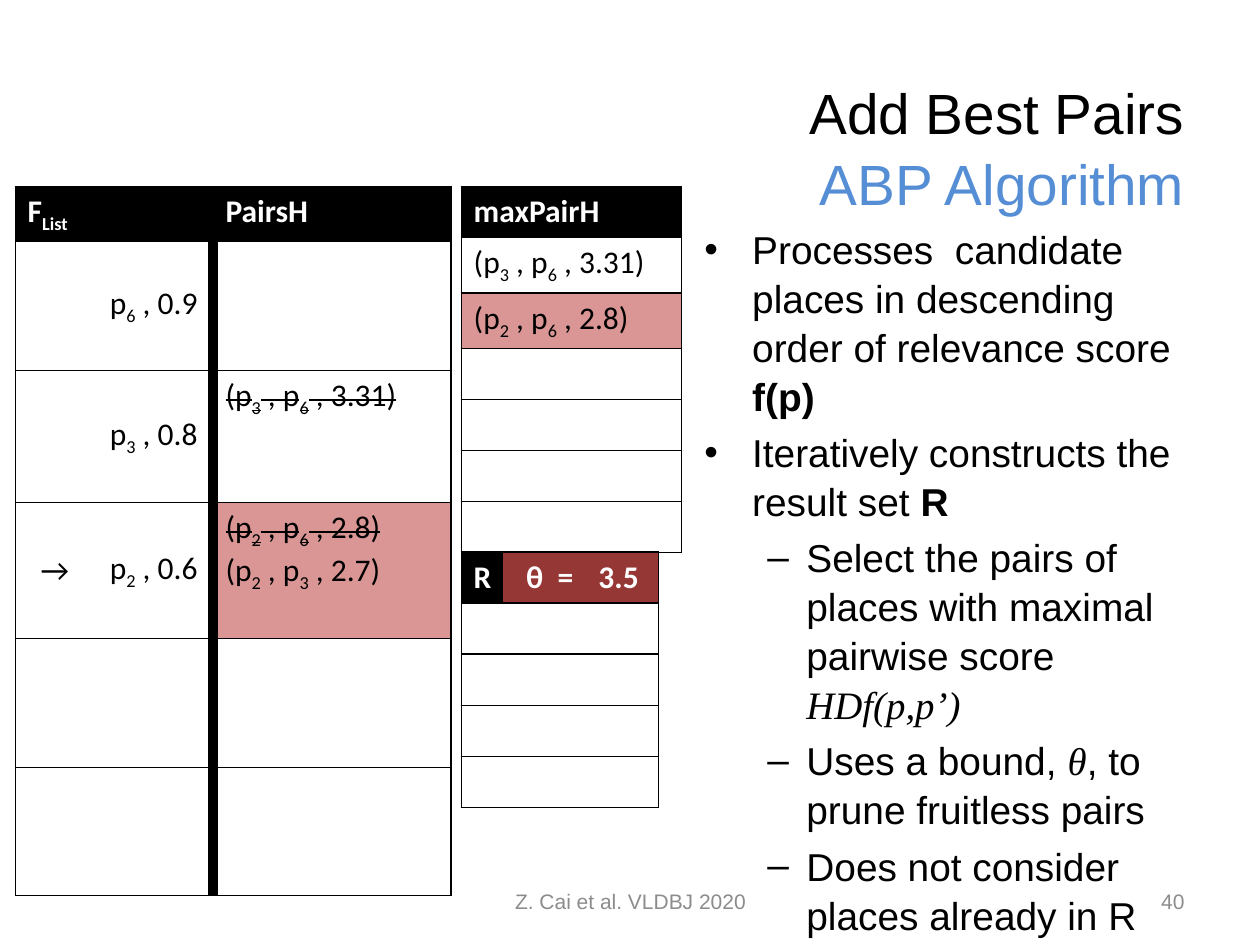
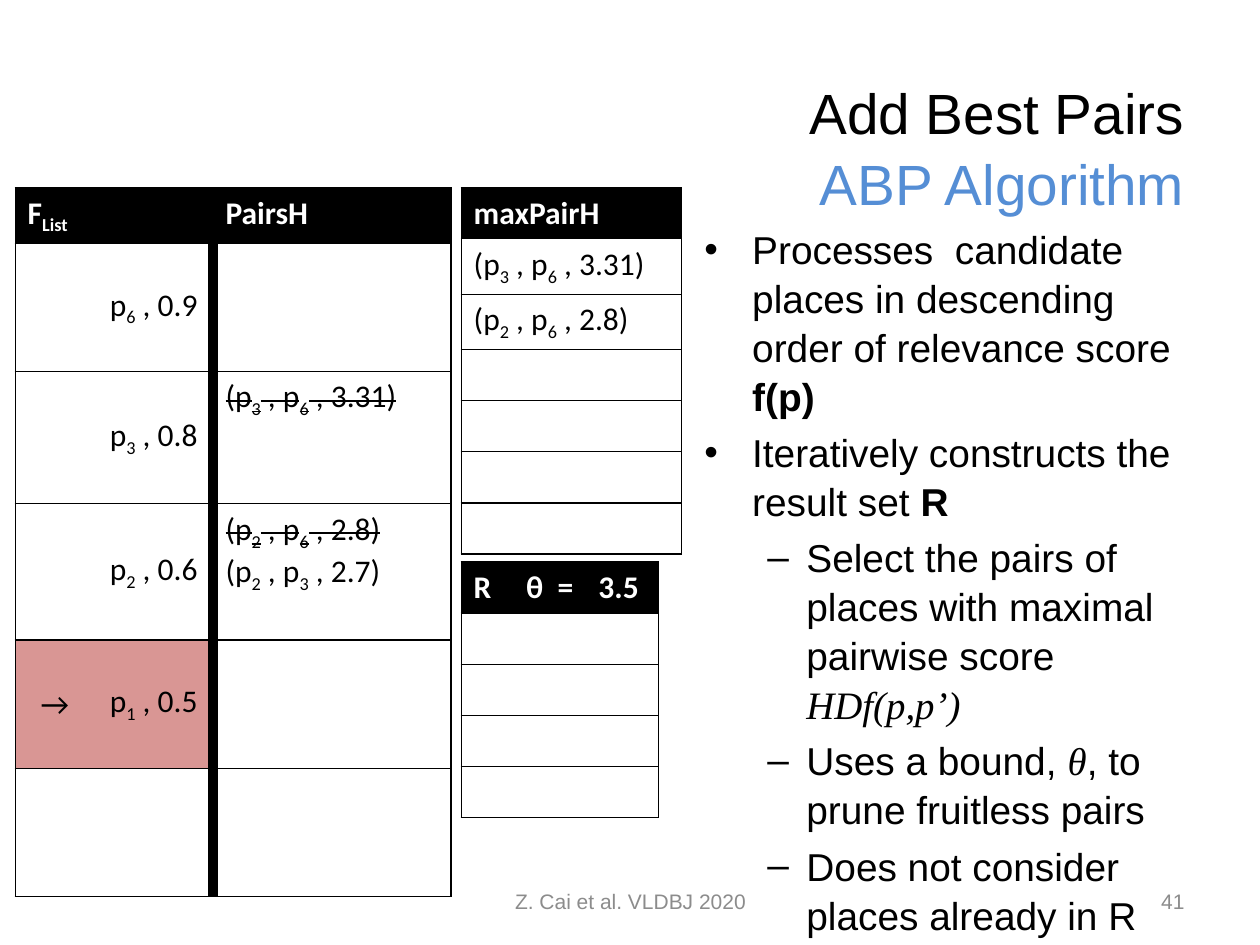
from lxml import etree
from pptx import Presentation
from pptx.dml.color import RGBColor
from pptx.enum.text import MSO_ANCHOR as Anchor, MSO_AUTO_SIZE as AutoSize, PP_ALIGN as Align
from pptx.oxml.ns import qn
from pptx.util import Inches, Pt

BLACK = RGBColor(0x00, 0x00, 0x00)
WHITE = RGBColor(0xFF, 0xFF, 0xFF)
GRAY = RGBColor(0x8C, 0x8C, 0x8C)
BLUE = RGBColor(0x55, 0x8E, 0xD5)
PINK = RGBColor(0xD9, 0x96, 0x94)
DARK_RED = RGBColor(0x95, 0x37, 0x35)

GRID_COLUMNS, GRID_ROWS = 100, 75
THIN, HEAVY = 0.75, 6
BULLETS = [("•", 0.38, 0.38), ("–", 0.81, 0.31)]

POINTS = [
    (0, [("Processes  candidate places in descending order of relevance score ", ""), ("f(p)", "bold")]),
    (0, [("Iteratively constructs the result set ", ""), ("R", "bold")]),
    (1, [("Select the pairs of places with maximal pairwise score ", ""), ("HDf(p,p’)", "math")]),
    (1, [("Uses a bound, ", ""), ("θ", "math"), (", to prune fruitless pairs", "")]),
    (1, [("Does not consider places already in R", "")]),
]

STEPS = [
    dict(
        number=40, top=14.8, result_top=43.8,
        current=["→", "p|2| , 0.6"], upcoming=["", ""],
        pair_fills={(3, 2): PINK}, max_fills={(2, 0): PINK},
        result_fills={(0, 1): DARK_RED, (0, 2): DARK_RED},
    ),
    dict(
        number=41, top=14.9, result_top=44.6,
        current=["", "p|2| , 0.6"], upcoming=["→", "p|1| , 0.5"],
        pair_fills={(4, 0): PINK, (4, 1): PINK}, max_fills={}, result_fills={},
    ),
]


def style(font, size, color, name="Arial", bold=None):
    font.name, font.size, font.bold = name, Pt(size), bold
    font.color.rgb = color


def draw_edge(cell, side, width):
    line = etree.SubElement(cell._tc.get_or_add_tcPr(), qn("a:ln" + side), w=str(Pt(width)))
    if width:
        fill = etree.SubElement(line, qn("a:solidFill"))
        etree.SubElement(fill, qn("a:srgbClr"), val=str(BLACK))
    else:
        etree.SubElement(line, qn("a:noFill"))


def write_cell(cell, text, color, bold, align):
    for index, line in enumerate(text.split("\n")):
        frame = cell.text_frame
        paragraph = frame.add_paragraph() if index else frame.paragraphs[0]
        paragraph.alignment = align
        style(paragraph.font, 18, color, "Calibri", bold)
        for position, piece in enumerate(line.lstrip("~").split("|")):
            if not piece:
                continue
            run = paragraph.add_run()
            run.text = piece
            properties = run._r.get_or_add_rPr()
            if line.startswith("~"):
                properties.set("strike", "sngStrike")
            if position % 2:
                properties.set("baseline", "-25000")


class Deck:
    def __init__(self):
        self.presentation = Presentation()
        self.presentation.slide_width = Inches(10)
        self.presentation.slide_height = Inches(7.5)
        self.column = self.presentation.slide_width / GRID_COLUMNS
        self.row = self.presentation.slide_height / GRID_ROWS
        self.slide = None

    def box(self, left, top, width, height):
        return (round(left * self.column), round(top * self.row),
                round(width * self.column), round(height * self.row))

    def place(self, shape, area):
        shape.left, shape.top, shape.width, shape.height = self.box(*area)
        shape.text_frame.word_wrap = True
        shape.text_frame.auto_size = AutoSize.NONE
        return shape.text_frame

    def new_slide(self):
        layout = self.presentation.slide_layouts[1]
        self.slide = self.presentation.slides.add_slide(layout)

    def title(self, area, heading, subheading):
        frame = self.place(self.slide.shapes.title, area)
        frame.vertical_anchor = Anchor.MIDDLE
        paragraph = frame.paragraphs[0]
        paragraph.alignment = Align.RIGHT
        paragraph.line_spacing = 1.05
        style(paragraph.font, 32.4, BLACK)
        paragraph.add_run().text = heading
        paragraph.add_line_break()
        run = paragraph.add_run()
        run.text = subheading
        run.font.color.rgb = BLUE

    def bullets(self, area, points):
        frame = self.place(self.slide.placeholders[1], area)
        for index, (level, pieces) in enumerate(points):
            paragraph = frame.add_paragraph() if index else frame.paragraphs[0]
            paragraph.level = level
            paragraph.line_spacing = 1.05
            paragraph.space_before = Pt(4.2 if index else 0)
            mark, indent, hanging = BULLETS[level]
            properties = paragraph._p.get_or_add_pPr()
            properties.set("marL", str(Inches(indent)))
            properties.set("indent", str(-Inches(hanging)))
            etree.SubElement(properties, qn("a:buFont"), typeface="Arial")
            etree.SubElement(properties, qn("a:buChar"), char=mark)
            style(paragraph.font, 22.2, BLACK)
            for text, kind in pieces:
                run = paragraph.add_run()
                run.text = text
                if kind == "bold":
                    run.font.bold = True
                elif kind == "math":
                    run.font.name, run.font.italic = "Times New Roman", True

    def footer(self, area, text, align):
        frame = self.place(self.slide.shapes.add_textbox(*self.box(*area)), area)
        frame.vertical_anchor = Anchor.MIDDLE
        paragraph = frame.paragraphs[0]
        paragraph.text = text
        paragraph.alignment = align
        style(paragraph.font, 12, GRAY)

    def table(self, left, top, widths, heights, texts, fills,
              open_edges=(), heavy_edge=None, centered=(), header_aligns=None, merge_body=False):
        area = self.box(left, top, sum(widths), sum(heights))
        table = self.slide.shapes.add_table(len(heights), len(widths), *area).table
        table.first_row = table.horz_banding = False
        for column, width in zip(table.columns, widths):
            column.width = round(width * self.column)
        for row, height in zip(table.rows, heights):
            row.height = round(height * self.row)
        if merge_body:
            for r in range(1, len(heights)):
                table.cell(r, 0).merge(table.cell(r, len(widths) - 1))

        for r in range(len(heights)):
            for c in range(len(widths)):
                cell = table.cell(r, c)
                if cell.is_spanned:
                    continue
                for side, edge in (("L", c), ("R", c + 1)):
                    width = HEAVY if r and edge == heavy_edge else THIN
                    draw_edge(cell, side, 0 if edge in open_edges and not cell.is_merge_origin else width)
                for side in "TB":
                    draw_edge(cell, side, THIN)

                fill = fills.get((r, c), None if r else BLACK)
                if fill is None:
                    cell.fill.background()
                else:
                    cell.fill.solid()
                    cell.fill.fore_color.rgb = fill

                align = Align.CENTER if r and c in centered else Align.LEFT
                if not r and header_aligns:
                    align = header_aligns[c]
                if r and c in centered:
                    cell.vertical_anchor = Anchor.MIDDLE
                text = texts[r][c] if r < len(texts) else ""
                write_cell(cell, text, BLACK if r else WHITE, not r, align)


def build_step(deck, step):
    deck.new_slide()
    deck.title((21.7, 5.3, 73.3, 12.5), "Add Best Pairs", "ABP Algorithm")
    deck.footer((71.7, 69.5, 23.3, 4), str(step["number"]), Align.RIGHT)
    deck.table(
        36.6, step["result_top"], [3.3, 6.6, 5.8], [4.05] * 5,
        [["R", "θ  =", "3.5"]], step["result_fills"],
        open_edges=(1, 2), header_aligns=(Align.LEFT, Align.RIGHT, Align.LEFT), merge_body=True,
    )
    deck.table(
        1.2, step["top"], [6.3, 9.4, 18.9], [4.3, 10.2, 10.5, 10.8, 10.2, 10.2],
        [
            ["F|List|", "", "PairsH"],
            ["", "p|6| , 0.9", ""],
            ["", "p|3| , 0.8", "~(p|3| , p|6| , 3.31)"],
            [*step["current"], "~(p|2| , p|6| , 2.8)\n(p|2| , p|3| , 2.7)"],
            [*step["upcoming"], ""],
        ],
        step["pair_fills"], open_edges=(1,), heavy_edge=2, centered=(0, 1),
    )
    deck.table(
        36.6, step["top"], [17.5], [4.05, 4.4, 4.4] + [4.05] * 4,
        [["maxPairH"], ["(p|3| , p|6| , 3.31)"], ["(p|2| , p|6| , 2.8)"]], step["max_fills"],
    )
    deck.bullets((54.9, 17.2, 42.3, 52.6), POINTS)
    deck.footer((34.2, 69.5, 31.7, 4), "Z. Cai et al. VLDBJ 2020", Align.CENTER)


def main():
    deck = Deck()
    for step in STEPS:
        build_step(deck, step)
    deck.presentation.save("out.pptx")


if __name__ == "__main__":
    main()
